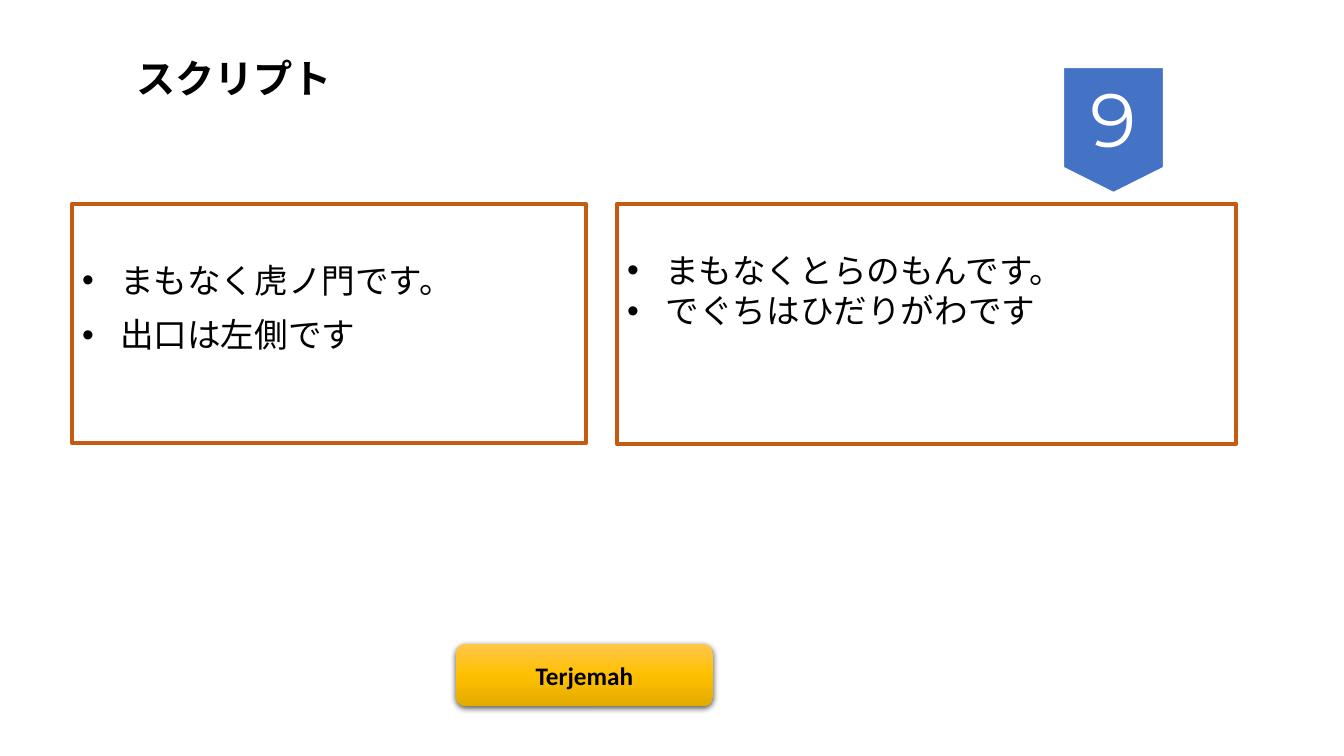
from copy import deepcopy

from lxml import etree
from pptx import Presentation
from pptx import util as u
from pptx.dml.color import RGBColor
from pptx.enum import shapes, text
from pptx.oxml.ns import qn

BLACK = RGBColor(0x00, 0x00, 0x00)
WHITE = RGBColor(0xFF, 0xFF, 0xFF)
RUST = RGBColor(0xC5, 0x5A, 0x11)
BLUE = RGBColor(0x44, 0x72, 0xC4)
GOLDS = [RGBColor(0xFF, 0xC6, 0x4B), RGBColor(0xFF, 0xC0, 0x00),
         RGBColor(0xE3, 0xAB, 0x00)]


def px(n):
    return u.Emu(round(n * 914400 / 100.8))


def place(shape, box):
    shape.left, shape.top, shape.width, shape.height = map(px, box)


def style(par, size, color=BLACK, bold=False, name="Calibri"):
    font = par.font
    font.name, font.size, font.bold = name, u.Pt(size), bold
    font.color.rgb = color


def setup(frame, anchor):
    frame.word_wrap = True
    frame.auto_size = text.MSO_AUTO_SIZE.NONE
    frame.vertical_anchor = anchor


# Heading
def head(slide, box, words):
    title = slide.shapes.title
    place(title, box)
    title.text = words
    setup(title.text_frame, text.MSO_ANCHOR.TOP)
    par = title.text_frame.paragraphs[0]
    par.alignment = text.PP_ALIGN.LEFT
    style(par, 28, bold=True)


# Framed bullet list
def panel(holder, box, lines, inset, gap, lead):
    place(holder, box)
    holder.line.color.rgb = RUST
    holder.line.width = u.Pt(3)
    frame = holder.text_frame
    frame.text = "\n".join(lines)
    setup(frame, text.MSO_ANCHOR.TOP)
    frame.margin_top = px(inset)
    for i, par in enumerate(frame.paragraphs):
        props = par._p.get_or_add_pPr()
        props.set("marL", str(px(38)))
        props.set("indent", str(-px(38)))
        par.line_spacing = lead
        par.space_before = u.Pt(gap if i else 0)
        style(par, 24)


# Shape with one centred label
def label(slide, kind, box, words, anchor):
    shape = slide.shapes.add_shape(kind, *map(px, box))
    shape.shadow.inherit = False
    setup(shape.text_frame, anchor)
    par = shape.text_frame.paragraphs[0]
    par.text = words
    par.alignment = text.PP_ALIGN.CENTER
    return shape, par


# Number badge
def badge(slide, box, words):
    kind = shapes.MSO_SHAPE.FLOWCHART_OFFPAGE_CONNECTOR
    shape, par = label(slide, kind, box, words, text.MSO_ANCHOR.TOP)
    shape.fill.solid()
    shape.fill.fore_color.rgb = BLUE
    shape.line.color.rgb = WHITE
    shape.line.width = u.Pt(1.5)
    style(par, 54, WHITE, name="Montserrat")


# Gold button with a soft shadow
def button(slide, box, words):
    kind = shapes.MSO_SHAPE.ROUNDED_RECTANGLE
    shape, par = label(slide, kind, box, words, text.MSO_ANCHOR.MIDDLE)
    style(par, 18, bold=True)
    shape.line.fill.background()
    shape.fill.gradient()
    shape.fill.gradient_angle = 270
    props = shape._element.spPr
    stops = props.find(".//" + qn("a:gsLst"))
    stops.append(deepcopy(stops[-1]))
    for i, (stop, gold) in enumerate(zip(shape.fill.gradient_stops, GOLDS)):
        stop.position = i / 2
        stop.color.rgb = gold
    glow = etree.SubElement(
        props.find(qn("a:effectLst")), qn("a:outerShdw"),
        blurRad=str(u.Pt(4.5)), dist=str(u.Pt(1.5)), dir="5400000",
        algn="ctr", rotWithShape="0")
    tint = etree.SubElement(glow, qn("a:srgbClr"), val=str(BLACK))
    etree.SubElement(tint, qn("a:alpha"), val="63000")


def main():
    deck = Presentation()
    deck.slide_width, deck.slide_height = px(1344), px(756)
    slide = deck.slides.add_slide(deck.slide_layouts[3])
    left, right = list(slide.placeholders)[1:3]
    head(slide, (126, 49, 351, 57), "スクリプト")
    panel(left, (72, 204, 514, 239),
          ["まもなく虎ノ門です。", "出口は左側です"], 60, 13, 0.9)
    panel(right, (617, 204, 619, 240),
          ["まもなくとらのもんです。", "でぐちはひだりがわです"], 46, 0, 1.0)
    button(slide, (456, 644, 257, 62), "Terjemah")
    badge(slide, (1063, 67, 101, 126), "9")
    deck.save("out.pptx")


if __name__ == "__main__":
    main()
